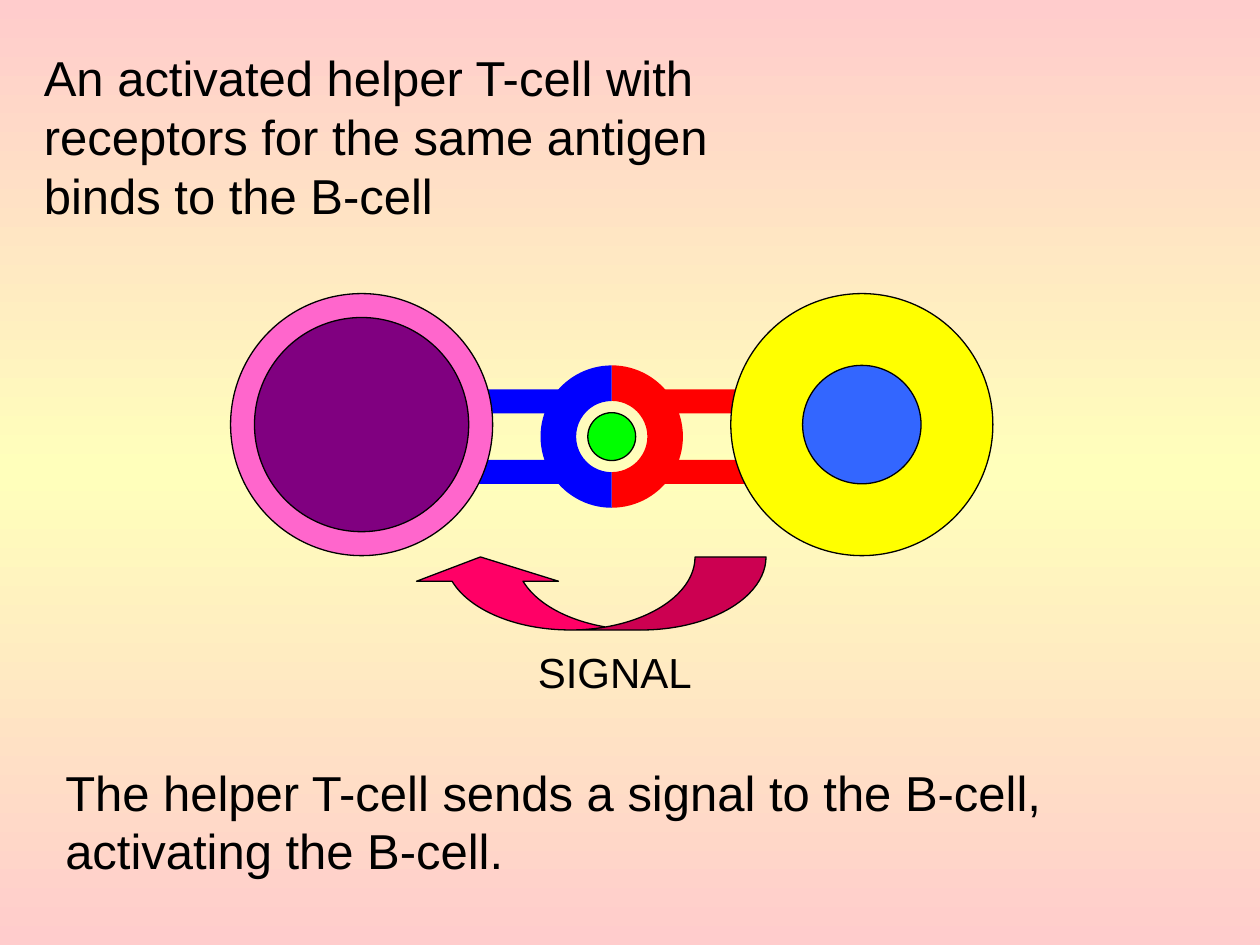
from copy import deepcopy
from dataclasses import dataclass

from pptx import Presentation
from pptx.dml.color import RGBColor
from pptx.enum.shapes import MSO_SHAPE
from pptx.oxml.ns import qn
from pptx.util import Inches, Pt


@dataclass(frozen=True)
class Theme:
    font: str = "Arial"
    body: int = 28
    label: int = 24
    ink: str = "000000"
    edge: float = 0.75
    rose: str = "FFCCCC"
    cream: str = "FFFFBB"
    green: str = "00FF00"
    red: str = "FF0000"
    yellow: str = "FFFF00"
    sky: str = "3366FF"
    blue: str = "0000FF"
    pink: str = "FF66CC"
    purple: str = "800080"
    signal: str = "FF0066"


THEME = Theme()
CELL = 2.08
RING = 1.13
BAR_W, BAR_H = 0.94, 0.19


def paint_back(slide):
    fill = slide.background.fill
    fill.gradient()
    fill.gradient_angle = 270
    stops = slide.element.find(".//" + qn("a:gsLst"))
    stops.insert(1, deepcopy(stops[0]))
    colors = (THEME.rose, THEME.cream, THEME.rose)
    for stop, color, place in zip(fill.gradient_stops, colors, (0, 0.5, 1)):
        stop.color.rgb = RGBColor.from_string(color)
        stop.position = place


def add_part(shapes, kind, box, color, edge=True):
    part = shapes.add_shape(kind, *map(Inches, box))
    part.shadow.inherit = False
    part.fill.solid()
    part.fill.fore_color.rgb = RGBColor.from_string(color)
    if edge:
        part.line.color.rgb = RGBColor.from_string(THEME.ink)
        part.line.width = Pt(THEME.edge)
    else:
        part.line.fill.background()
    return part


def add_text(shapes, box, text, size, wrap=True):
    frame = shapes.add_textbox(*map(Inches, box)).text_frame
    frame.word_wrap = wrap
    frame.text = text
    font = frame.paragraphs[0].runs[0].font
    font.name = THEME.font
    font.size = Pt(size)
    font.color.rgb = RGBColor.from_string(THEME.ink)


def add_disc(shapes, mid_x, mid_y, size, color):
    box = (mid_x - size / 2, mid_y - size / 2, size, size)
    add_part(shapes, MSO_SHAPE.OVAL, box, color)


def add_link(shapes, box, turn, bar_x, color):
    left, top, width, height = box
    arc = add_part(shapes, MSO_SHAPE.BLOCK_ARC, box, color, edge=False)
    arc.rotation = turn
    for drop in (0.75, 0.19):
        bar = (left + bar_x, top + drop, BAR_W, BAR_H)
        add_part(shapes, MSO_SHAPE.RECTANGLE, bar, color, edge=False)


def add_cell(shapes, box, core, outer, inner):
    left, top, width, height = box
    mid_x, mid_y = left + width / 2, top + height / 2
    add_disc(shapes, mid_x, mid_y, width, outer)
    add_disc(shapes, mid_x, mid_y, core, inner)


def add_signal(shapes, box):
    left, top, width, height = box
    arrow = add_part(shapes, MSO_SHAPE.CURVED_UP_ARROW,
                     (left, top, width, 0.58), THEME.signal)
    arrow.element.spPr.get_or_add_xfrm().set("flipH", "1")
    for index, value in enumerate((0.971, 1.943, 0.333)):
        arrow.adjustments[index] = value
    add_text(shapes, (left + 0.92, top + 0.66, 1.43, 0.5),
             "SIGNAL", THEME.label, wrap=False)


def build_scene(slide, box):
    left, top, width, height = box
    ring = (left + 2.46, top + 0.57, RING, RING)

    right = slide.shapes.add_group_shape().shapes
    add_disc(right, ring[0] + RING / 2, ring[1] + RING / 2, 0.38, THEME.green)
    add_link(right, ring, 90, 0.95, THEME.red)
    add_cell(right, (left + width - CELL, top, CELL, CELL), 0.94,
             THEME.yellow, THEME.sky)

    side = slide.shapes.add_group_shape().shapes
    add_link(side, ring, 270, RING - 0.95 - BAR_W, THEME.blue)
    add_cell(side, (left, top, CELL, CELL), 1.7, THEME.pink, THEME.purple)
    add_signal(side, (left + 1.42, top + 2.09, 2.83, 1.16))


def main():
    deck = Presentation()
    deck.slide_width, deck.slide_height = Inches(10), Inches(7.5)
    slide = deck.slides.add_slide(deck.slide_layouts[6])
    paint_back(slide)
    add_text(slide.shapes, (0.25, 0.33, 6.33, 1.5),
             "An activated helper T-cell with receptors for the same antigen "
             "binds to the B-cell", THEME.body)
    build_scene(slide, (1.83, 2.33, 6.05, 3.25))
    add_text(slide.shapes, (0.42, 6, 9.33, 1.03),
             "The helper T-cell sends a signal to the B-cell, "
             "activating the B-cell.", THEME.body)
    deck.save("out.pptx")


if __name__ == "__main__":
    main()
